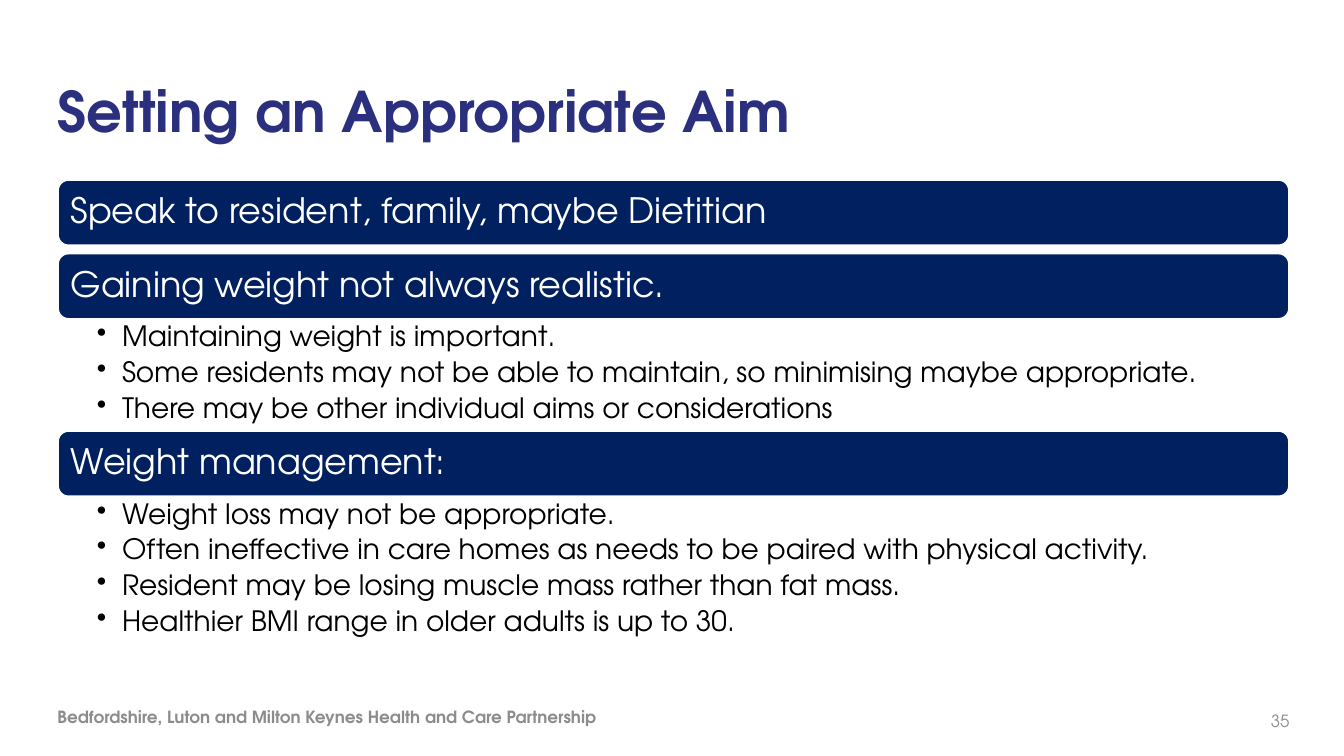
import pptx
import pptx.util
import pptx.dml.color
import pptx.enum.shapes
import pptx.enum.text
import pptx.oxml
import pptx.oxml.ns

Inches = pptx.util.Inches
Pt = pptx.util.Pt
RGBColor = pptx.dml.color.RGBColor
ALIGN = pptx.enum.text.PP_ALIGN
ANCHOR = pptx.enum.text.MSO_ANCHOR

TITLE = "Setting an Appropriate Aim"
FOOTER = "Bedfordshire, Luton and Milton Keynes Health and Care Partnership"
PAGE = "35"
SECTIONS = [
    ("Speak to resident, family, maybe Dietitian", [], 0.07),
    ("Gaining weight not always realistic.", [
        "Maintaining weight is important.",
        "Some residents may not be able to maintain, so minimising maybe appropriate.",
        "There may be other individual aims or considerations",
    ], 1.1),
    ("Weight management:", [
        "Weight loss may not be appropriate.",
        "Often ineffective in care homes as needs to be paired with physical activity.",
        "Resident may be losing muscle mass rather than fat mass.",
        "Healthier BMI range in older adults is up to 30.",
    ], 1.47),
]

FONT = "TeX Gyre Adventor"
INDIGO = RGBColor(0x2B, 0x30, 0x7E)
NAVY = RGBColor(0x00, 0x20, 0x60)
GREY = RGBColor(0x8C, 0x8C, 0x8C)
WHITE = RGBColor(0xFF, 0xFF, 0xFF)
BLACK = RGBColor(0x00, 0x00, 0x00)

LEFT, WIDTH = 0.57, 12.22
BARS_TOP, BAR_HEIGHT = 1.78, 0.66


def set_frame(sp, insets, anchor):
    tf = sp.text_frame
    tf.word_wrap = True
    tf.vertical_anchor = anchor
    tf.margin_left, tf.margin_top, tf.margin_right, tf.margin_bottom = map(Inches, insets)
    return tf


def write(p, text, size, color, bold=False, align=ALIGN.LEFT, after=0, spacing=None):
    p.alignment = align
    p.space_after = Pt(after)
    if spacing:
        p.line_spacing = spacing
    r = p.add_run()
    r.text = text
    r.font.name = FONT
    r.font.size = Pt(size)
    r.font.bold = bold
    r.font.color.rgb = color


def add_label(s, box, text, size, color, **style):
    sp = s.shapes.add_textbox(*map(Inches, box))
    tf = set_frame(sp, (0, 0, 0, 0), ANCHOR.MIDDLE)
    write(tf.paragraphs[0], text, size, color, **style)


def add_bar(s, top, text):
    sp = s.shapes.add_shape(pptx.enum.shapes.MSO_SHAPE.ROUNDED_RECTANGLE,
                            *map(Inches, (LEFT, top, WIDTH, BAR_HEIGHT)))
    sp.shadow.inherit = False
    sp.fill.solid()
    sp.fill.fore_color.rgb = NAVY
    sp.line.color.rgb = WHITE
    sp.line.width = Pt(2)
    tf = set_frame(sp, (0.1, 0.1, 0.1, 0.1), ANCHOR.MIDDLE)
    write(tf.paragraphs[0], text, 25, WHITE, after=8.75, spacing=0.9)


def add_bullets(s, top, height, lines):
    sp = s.shapes.add_textbox(*map(Inches, (LEFT, top, WIDTH, height)))
    tf = set_frame(sp, (0.39, 0.03, 0.19, 0.03), ANCHOR.TOP)
    for i, line in enumerate(lines):
        p = tf.add_paragraph() if i else tf.paragraphs[0]
        p.level = 1
        pPr = p._p.get_or_add_pPr()
        pPr.set("marL", str(Inches(0.25)))
        pPr.set("indent", str(Inches(-0.25)))
        bullet = pptx.oxml.parse_xml(
            '<a:buChar %s char="•"/>' % pptx.oxml.ns.nsdecls("a"))
        pPr.append(bullet)
        write(p, line, 20, BLACK, after=4, spacing=0.9)


def main():
    prs = pptx.Presentation()
    prs.slide_width, prs.slide_height = Inches(13.33), Inches(7.5)
    s = prs.slides.add_slide(prs.slide_layouts[6])

    add_label(s, (LEFT, 0.42, 9.64, 1.35), TITLE, 40, INDIGO, bold=True)
    add_label(s, (LEFT, 6.91, 8.1, 0.4), FOOTER, 12, GREY, bold=True, after=6)
    add_label(s, (12.26, 6.95, 0.53, 0.4), PAGE, 12, GREY, align=ALIGN.RIGHT, after=6)

    top = BARS_TOP
    for heading, lines, space_below in SECTIONS:
        add_bar(s, top, heading)
        top += BAR_HEIGHT
        if lines:
            add_bullets(s, top, space_below, lines)
        top += space_below

    prs.save("out.pptx")


if __name__ == "__main__":
    main()
